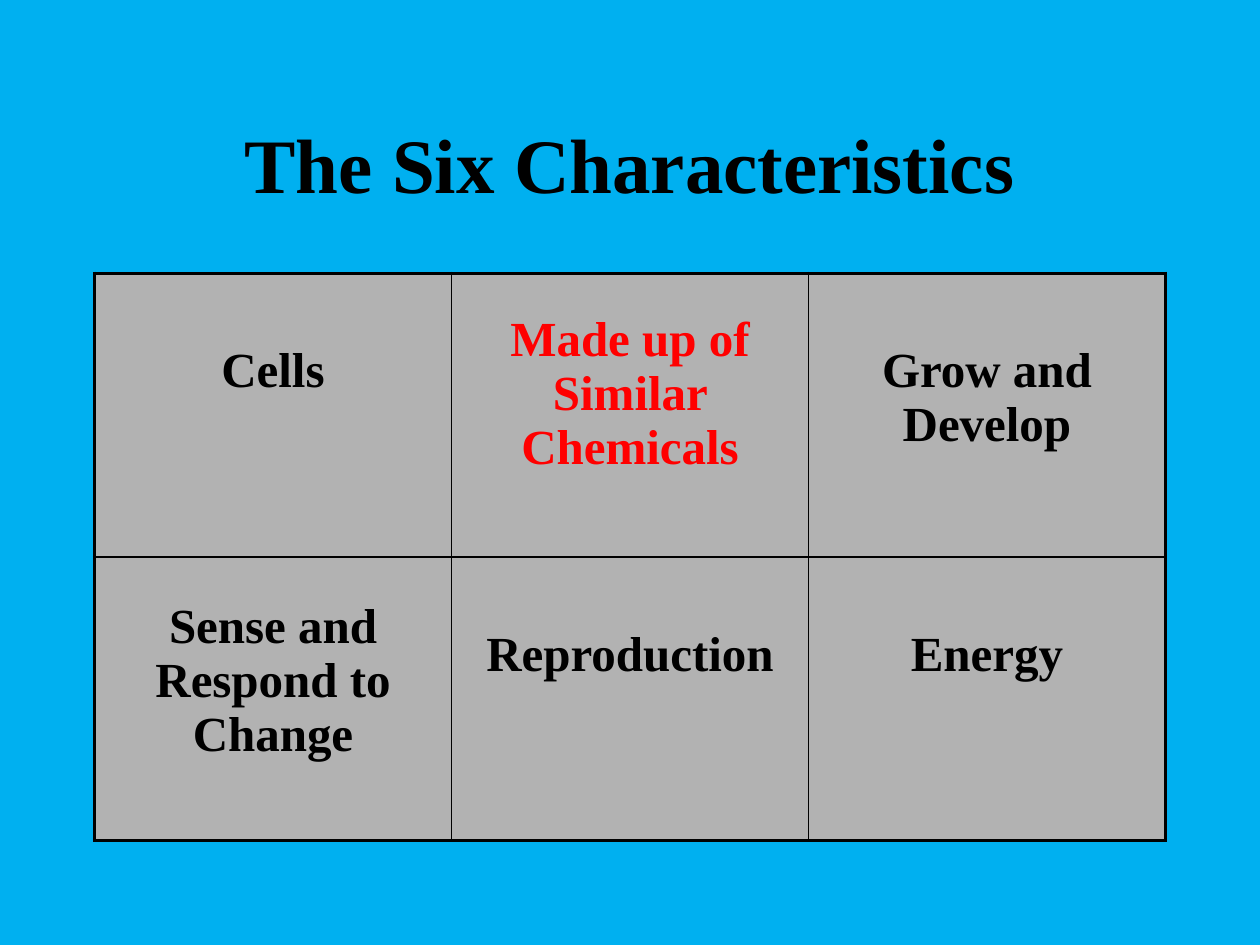
"""Build a slide with a three by two table of the six characteristics."""
import pptx
import pptx.dml.color
import pptx.enum.text
import pptx.oxml
import pptx.oxml.ns
import pptx.util
from pptx.util import Inches

SKY = pptx.dml.color.RGBColor(0x00, 0xB0, 0xF0)
BLACK = pptx.dml.color.RGBColor(0x00, 0x00, 0x00)
RED = pptx.dml.color.RGBColor(0xFF, 0x00, 0x00)
GRAY = pptx.dml.color.RGBColor(0xB2, 0xB2, 0xB2)

CHARACTERISTICS = [
    [("Cells", BLACK, 0.56), ("Made up of Similar Chemicals", RED, 0.31),
     ("Grow and Develop", BLACK, 0.56)],
    [("Sense and Respond to Change", BLACK, 0.34), ("Reproduction", BLACK, 0.56),
     ("Energy", BLACK, 0.56)],
]


class SlideBuilder:
    font_name = "Times New Roman"
    outer_width = 2.25
    inner_width = 1

    def __init__(self, presentation):
        self.slide = presentation.slides.add_slide(presentation.slide_layouts[5])
        fill = self.slide.background.fill
        fill.solid()
        fill.fore_color.rgb = SKY

    def format_text(self, text_frame, size, color):
        for paragraph in text_frame.paragraphs:
            paragraph.alignment = pptx.enum.text.PP_ALIGN.CENTER
            for run in paragraph.runs:
                run.font.name = self.font_name
                run.font.size = pptx.util.Pt(size)
                run.font.bold = True
                run.font.color.rgb = color

    def title(self, text, left, top, width, height):
        shape = self.slide.shapes.title
        shape.left, shape.top = Inches(left), Inches(top)
        shape.width, shape.height = Inches(width), Inches(height)
        shape.text_frame.text = text
        shape.text_frame.vertical_anchor = pptx.enum.text.MSO_ANCHOR.MIDDLE
        self.format_text(shape.text_frame, 44, BLACK)

    def border(self, cell, side, width):
        properties = cell._tc.get_or_add_tcPr()
        properties.append(pptx.oxml.parse_xml(
            f'<a:ln{side} {pptx.oxml.ns.nsdecls("a")} w="{pptx.util.Pt(width)}">'
            f'<a:solidFill><a:srgbClr val="{BLACK}"/></a:solidFill></a:ln{side}>'))

    def table(self, rows, left, top, width, height):
        row_count, column_count = len(rows), len(rows[0])
        table = self.slide.shapes.add_table(
            row_count, column_count, Inches(left), Inches(top),
            Inches(width), Inches(height)).table
        table.first_row = table.horz_banding = False
        for row, entries in enumerate(rows):
            for column, (text, color, margin_top) in enumerate(entries):
                cell = table.cell(row, column)
                outer_sides = {"L": column == 0, "R": column == column_count - 1,
                               "T": row == 0, "B": row == row_count - 1}
                for side, is_outer in outer_sides.items():
                    self.border(cell, side, self.outer_width if is_outer else self.inner_width)
                cell.fill.solid()
                cell.fill.fore_color.rgb = GRAY
                cell.margin_top = Inches(margin_top)
                cell.text_frame.text = text
                self.format_text(cell.text_frame, 28, color)


def main():
    presentation = pptx.Presentation()
    presentation.slide_width, presentation.slide_height = Inches(10), Inches(7.5)
    builder = SlideBuilder(presentation)
    builder.title("The Six Characteristics", 0.75, 0.67, 8.5, 1.25)
    builder.table(CHARACTERISTICS, 0.75, 2.17, 8.5, 4.5)
    presentation.save("out.pptx")


if __name__ == "__main__":
    main()
